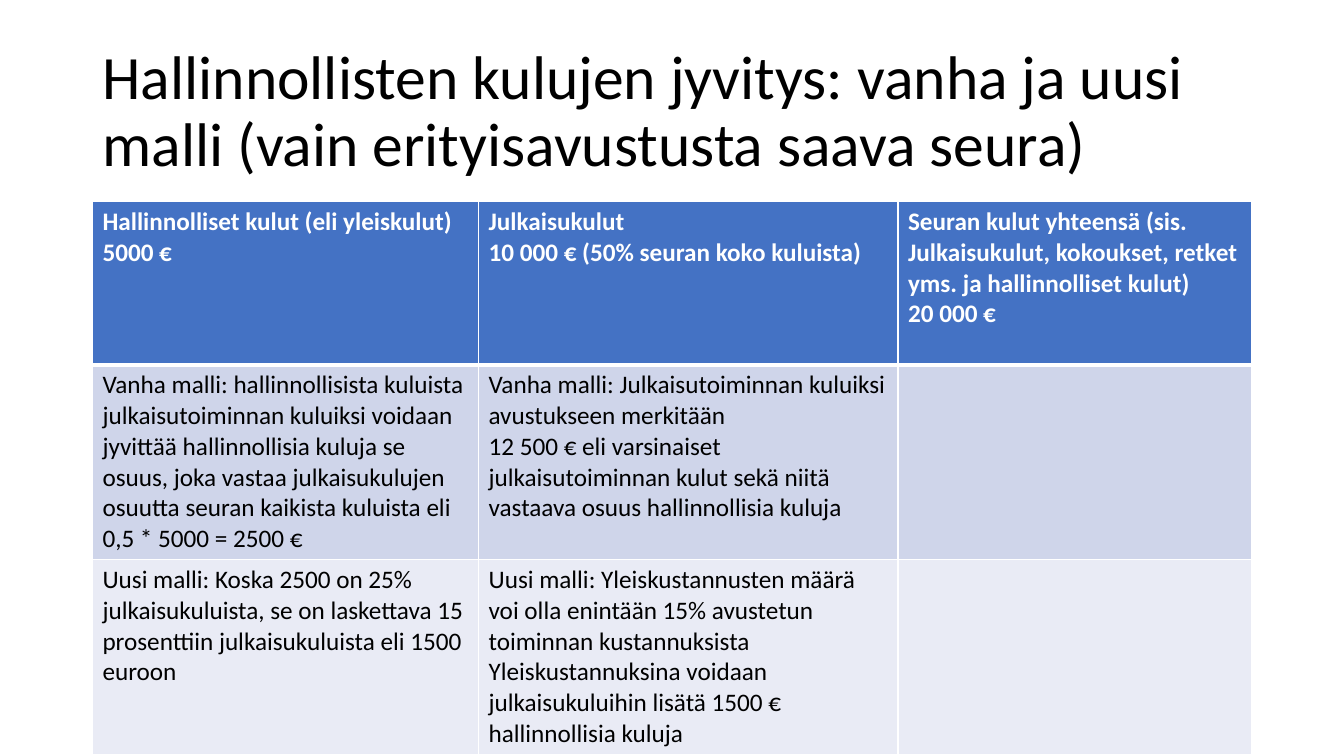
from lxml import etree
from pptx import Presentation
from pptx.dml.color import RGBColor
from pptx.enum.text import MSO_ANCHOR, MSO_AUTO_SIZE, PP_ALIGN
from pptx.oxml.ns import qn
from pptx.util import Cm, Pt

LEFT, MIDDLE, NO_FIT = PP_ALIGN.LEFT, MSO_ANCHOR.MIDDLE, MSO_AUTO_SIZE.NONE
TITLE_ONLY = 5
FONT = "Calibri"
COLORS = {"text": "000000", "white": "FFFFFF", "header": "4472C4",
          "old": "CFD5EA", "new": "E9EBF5"}

TITLE = "Hallinnollisten kulujen jyvitys: vanha ja uusi malli (vain erityisavustusta saava seura)"
COL_WIDTHS = [9.73, 10.57, 8.91]
ROWS = [
    ("header", 4.11, [
        "Hallinnolliset kulut (eli yleiskulut)\n5000 €",
        "Julkaisukulut\n10 000 € (50% seuran koko kuluista)",
        "Seuran kulut yhteensä (sis. Julkaisukulut, kokoukset, retket yms. ja "
        "hallinnolliset kulut)\n20 000 €"]),
    ("old", 4.91, [
        "Vanha malli: hallinnollisista kuluista julkaisutoiminnan kuluiksi voidaan jyvittää "
        "hallinnollisia kuluja se osuus, joka vastaa julkaisukulujen osuutta seuran kaikista "
        "kuluista eli\n0,5 * 5000 = 2500 €",
        "Vanha malli: Julkaisutoiminnan kuluiksi avustukseen merkitään\n12 500 € eli varsinaiset "
        "julkaisutoiminnan kulut sekä niitä vastaava osuus hallinnollisia kuluja",
        ""]),
    ("new", 4.91, [
        "Uusi malli: Koska 2500 on 25% julkaisukuluista, se on laskettava 15 prosenttiin "
        "julkaisukuluista eli 1500 euroon",
        "Uusi malli: Yleiskustannusten määrä voi olla enintään 15% avustetun toiminnan "
        "kustannuksista\nYleiskustannuksina voidaan julkaisukuluihin lisätä 1500 € "
        "hallinnollisia kuluja",
        ""]),
]


def rgb(name):
    """Return the named colour."""
    return RGBColor.from_string(COLORS[name])


def style_font(p, size, color, bold=False):
    """Set the font of a paragraph."""
    p.font.name, p.font.size, p.font.bold = FONT, Pt(size), bold
    p.font.color.rgb = rgb(color)


def add_borders(cell, top, bottom):
    """Draw white borders around a cell, with widths in points."""
    tcPr = cell._tc.get_or_add_tcPr()
    for side, width in (("L", 1), ("R", 1), ("T", top), ("B", bottom)):
        ln = etree.SubElement(tcPr, qn(f"a:ln{side}"), w=str(Pt(width)))
        fill = etree.SubElement(ln, qn("a:solidFill"))
        etree.SubElement(fill, qn("a:srgbClr"), val=COLORS["white"])


def set_title(slide, left, top, width, height):
    """Place and format the slide title."""
    s = slide.shapes.title
    s.left, s.top, s.width, s.height = Cm(left), Cm(top), Cm(width), Cm(height)
    tf = s.text_frame
    tf.text = TITLE
    tf.auto_size, tf.vertical_anchor = NO_FIT, MIDDLE
    p = tf.paragraphs[0]
    p.alignment, p.line_spacing = LEFT, 0.9
    style_font(p, 44, "text")


def add_cost_table(slide, left, top):
    """Add the table that compares the old and new cost models."""
    width, height = sum(COL_WIDTHS), sum(row[1] for row in ROWS)
    table = slide.shapes.add_table(len(ROWS), len(COL_WIDTHS), Cm(left), Cm(top),
                                   Cm(width), Cm(height)).table
    for column, col_width in zip(table.columns, COL_WIDTHS):
        column.width = Cm(col_width)
    for i, (kind, row_height, texts) in enumerate(ROWS):
        table.rows[i].height = Cm(row_height)
        header = kind == "header"
        for cell, text in zip(table.rows[i].cells, texts):
            add_borders(cell, 3 if i == 1 else 1, 3 if header else 1)
            cell.fill.solid()
            cell.fill.fore_color.rgb = rgb(kind)
            cell.text = text
            for p in cell.text_frame.paragraphs:
                style_font(p, 18, "white" if header else "text", header)


def main():
    """Build and save the presentation."""
    prs = Presentation()
    prs.slide_width, prs.slide_height = Cm(33.87), Cm(19.05)
    slide = prs.slides.add_slide(prs.slide_layouts[TITLE_ONLY])
    set_title(slide, 2.33, 1.01, 29.21, 3.68)
    add_cost_table(slide, 2.33, 5.08)
    prs.save("out.pptx")


if __name__ == "__main__":
    main()
